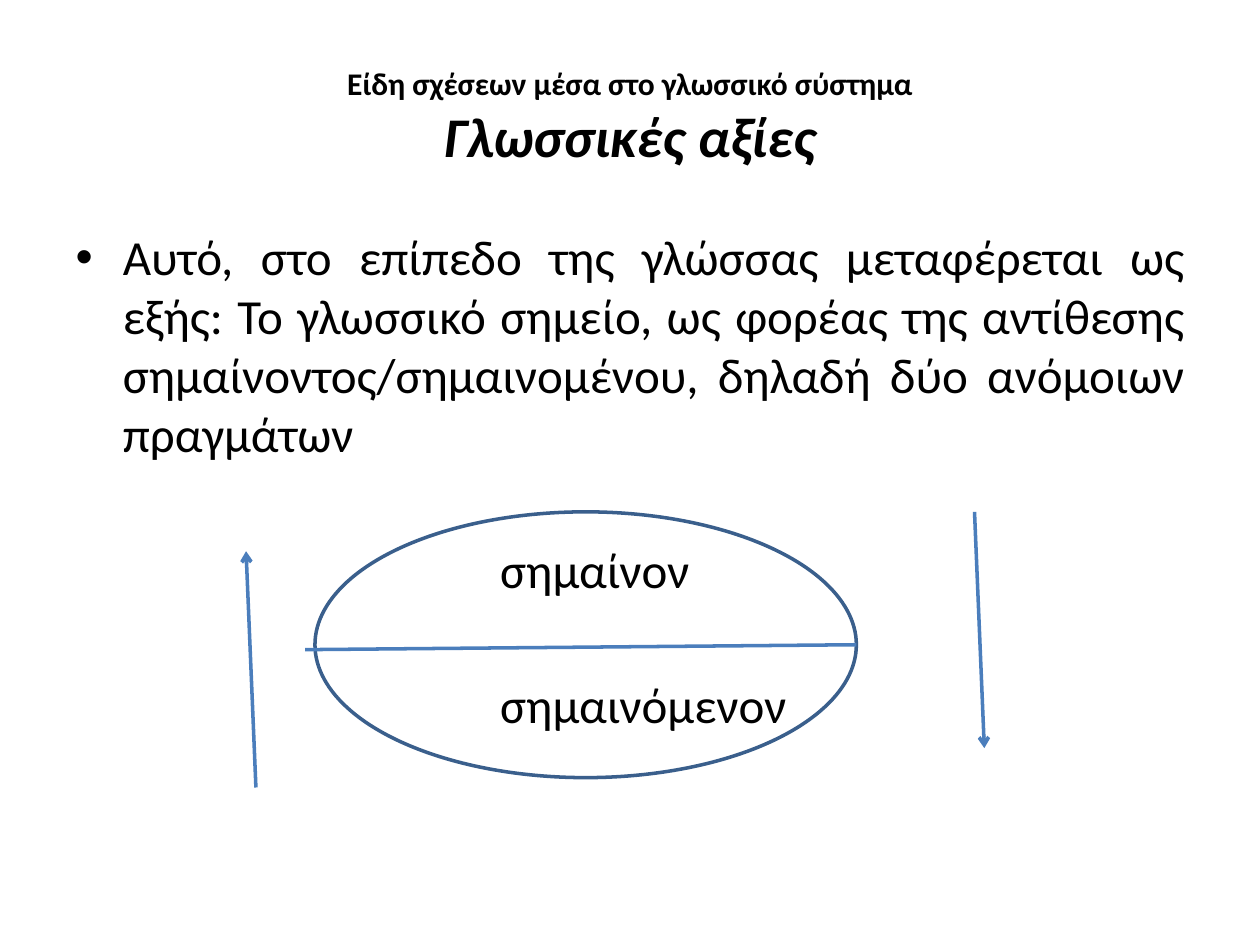
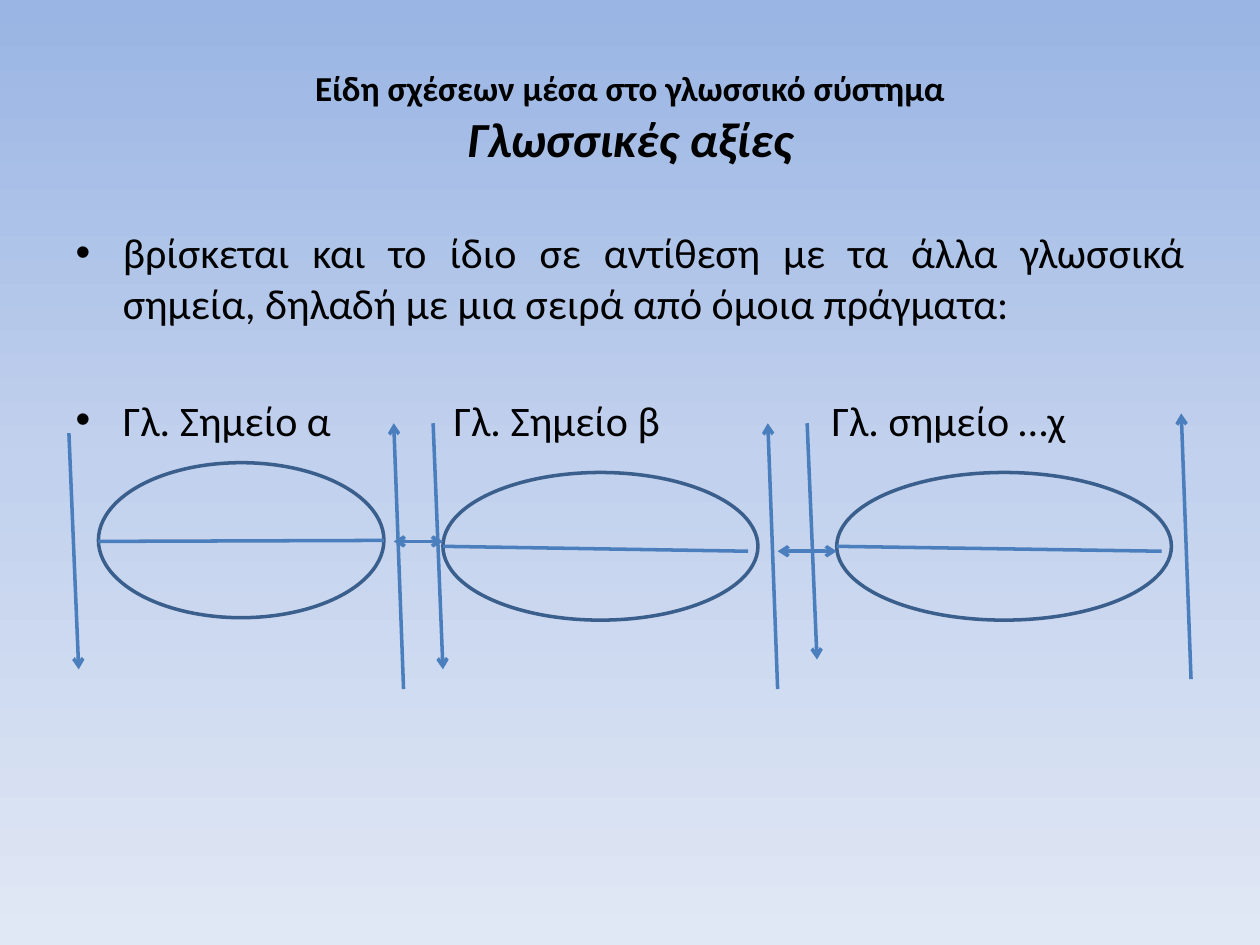
import copy
from dataclasses import dataclass
from lxml import etree
from pptx import Presentation
from pptx import util as u
from pptx.dml.color import RGBColor
from pptx.enum import shapes, text
from pptx.oxml.ns import qn

WIDTH, HEIGHT = u.Inches(10), u.Inches(7.5)
COLUMNS, ROWS = 128, 96          # drawing grid laid over the slide


@dataclass(frozen=True)
class Theme:
    font: str = "Calibri"
    ink: str = "000000"
    outline: str = "3A5F8C"
    line: str = "4B7EBC"
    weight: float = 2
    title_box: tuple = (0.05, 0.04, 0.9, 1 / 6)     # shares of the slide
    body_box: tuple = (0.05, 0.2333, 0.9, 0.66)


THEME = Theme()
HEADING = ("Είδη σχέσεων μέσα στο γλωσσικό σύστημα", "Γλωσσικές αξίες")

# Body entries: text and paragraph format (points before, inches of indent and tabs).
# Signs: oval (column, row, columns, rows) and its dividing line.
# Lines and arrows: (column, row) of the start, then of the end.
SLIDES = [
    dict(
        background=["FFFFFF"],
        title_sizes=(18, 32),
        body_size=28,
        body=[
            ("Αυτό, στο επίπεδο της γλώσσας μεταφέρεται ως εξής: "
             "Το γλωσσικό σημείο, ως φορέας της αντίθεσης "
             "σημαίνοντος/σημαινομένου, δηλαδή δύο ανόμοιων πραγμάτων", {}),
            ("σημαίνον", dict(before=44, indent=3.37)),
            ("σημαινόμενον", dict(before=44, indent=3.37)),
        ],
        signs=[((32, 52, 55, 27), (31, 66, 87, 65.5))],
        arrows=[(26, 80, 25, 56), (99, 52, 100, 76)],
        double_arrows=[],
    ),
    dict(
        background=["9AB5E4", "C2D1ED", "E1E8F5"],
        title_sizes=(20, 28),
        body_size=24,
        body=[
            ("βρίσκεται και το ίδιο σε αντίθεση με τα άλλα γλωσσικά σημεία, "
             "δηλαδή με μια σειρά από όμοια πράγματα:", {}),
            ("Γλ. Σημείο α\tΓλ. Σημείο β\tΓλ. σημείο …χ",
             dict(before=38, tabs=(3, 6))),
        ],
        signs=[
            ((10, 47, 29, 15.75), (10, 55, 39, 54.9)),
            ((45, 48, 32, 15), (45, 55.5, 76, 56)),
            ((85, 48, 34, 15), (85, 55.5, 118, 56)),
        ],
        arrows=[
            (7, 44, 8, 68), (41, 70, 40, 43),
            (44, 43, 45, 68), (79, 70, 78, 43),
            (82, 43, 83, 67), (121, 69, 120, 42),
        ],
        double_arrows=[(40, 55, 45, 55), (79, 56, 85, 56)],
    ),
]


def on_grid(column, row, *more):
    """Turn pairs of grid columns and rows into slide lengths."""
    cells = (column, row, *more)
    return [int(cell * (HEIGHT / ROWS if place % 2 else WIDTH / COLUMNS))
            for place, cell in enumerate(cells)]


def place(box, shares):
    left, top, width, height = shares
    box.left, box.width = int(left * WIDTH), int(width * WIDTH)
    box.top, box.height = int(top * HEIGHT), int(height * HEIGHT)
    box.text_frame.word_wrap = True
    box.text_frame.auto_size = text.MSO_AUTO_SIZE.NONE


def write(para, words, size, bold=None, italic=None):
    span = para.add_run()
    span.text = words
    font = span.font
    font.name, font.size = THEME.font, u.Pt(size)
    font.bold, font.italic = bold, italic
    font.color.rgb = RGBColor.from_string(THEME.ink)


def format_body(para, before=0, indent=None, tabs=()):
    """Justify a paragraph; an indent replaces the bullet."""
    para.alignment = text.PP_ALIGN.JUSTIFY
    para.space_before = u.Pt(before)
    props = para._p.get_or_add_pPr()
    if indent is not None:
        props.set("marL", str(u.Inches(indent)))
        props.set("indent", "0")
        etree.SubElement(props, qn("a:buNone"))
    if tabs:
        stops = etree.SubElement(props, qn("a:tabLst"))
        for stop in tabs:
            etree.SubElement(stops, qn("a:tab"), pos=str(u.Inches(stop)), algn="l")


def paint_background(page, colors):
    fill = page.background.fill
    if len(colors) == 1:
        fill.solid()
        fill.fore_color.rgb = RGBColor.from_string(colors[0])
        return
    fill.gradient()
    fill.gradient_angle = 270
    stop_list = next(page.element.iter(qn("a:gsLst")))
    while len(stop_list) < len(colors):
        stop_list.append(copy.deepcopy(stop_list[0]))
    for number, (stop, color) in enumerate(zip(fill.gradient_stops, colors)):
        stop.position = number / (len(colors) - 1)
        stop.color.rgb = RGBColor.from_string(color)


def draw_line(page, ends, heads=()):
    line = page.shapes.add_connector(shapes.MSO_CONNECTOR.STRAIGHT, *on_grid(*ends))
    line.line.color.rgb = RGBColor.from_string(THEME.line)
    line.line.width = u.Pt(THEME.weight)
    for head in heads:
        etree.SubElement(line.line._get_or_add_ln(), qn(head), type="arrow")
    etree.SubElement(line._element.spPr, qn("a:effectLst"))


def draw_oval(page, cells):
    oval = page.shapes.add_shape(shapes.MSO_SHAPE.OVAL, *on_grid(*cells))
    oval.shadow.inherit = False
    oval.fill.background()
    oval.line.color.rgb = RGBColor.from_string(THEME.outline)
    oval.line.width = u.Pt(THEME.weight)


def build_page(deck, content):
    page = deck.slides.add_slide(deck.slide_layouts[1])
    paint_background(page, content["background"])

    # Title: small topic line over the large italic heading
    title, body = page.placeholders
    place(title, THEME.title_box)
    title.text_frame.vertical_anchor = text.MSO_ANCHOR.MIDDLE
    para = title.text_frame.paragraphs[0]
    para.alignment = text.PP_ALIGN.CENTER
    small, large = content["title_sizes"]
    write(para, HEADING[0], small, bold=True)
    para.add_line_break()
    write(para, HEADING[1], large, bold=True, italic=True)

    # Body text
    place(body, THEME.body_box)
    for number, (words, layout) in enumerate(content["body"]):
        frame = body.text_frame
        para = frame.add_paragraph() if number else frame.paragraphs[0]
        format_body(para, **layout)
        write(para, words, content["body_size"])

    # Diagram of signs
    for oval, divider in content["signs"]:
        draw_oval(page, oval)
        draw_line(page, divider)
    for ends in content["arrows"]:
        draw_line(page, ends, heads=["a:tailEnd"])
    for ends in content["double_arrows"]:
        draw_line(page, ends, heads=["a:headEnd", "a:tailEnd"])


def main():
    deck = Presentation()
    deck.slide_width, deck.slide_height = WIDTH, HEIGHT
    for content in SLIDES:
        build_page(deck, content)
    deck.save("out.pptx")


if __name__ == "__main__":
    main()
